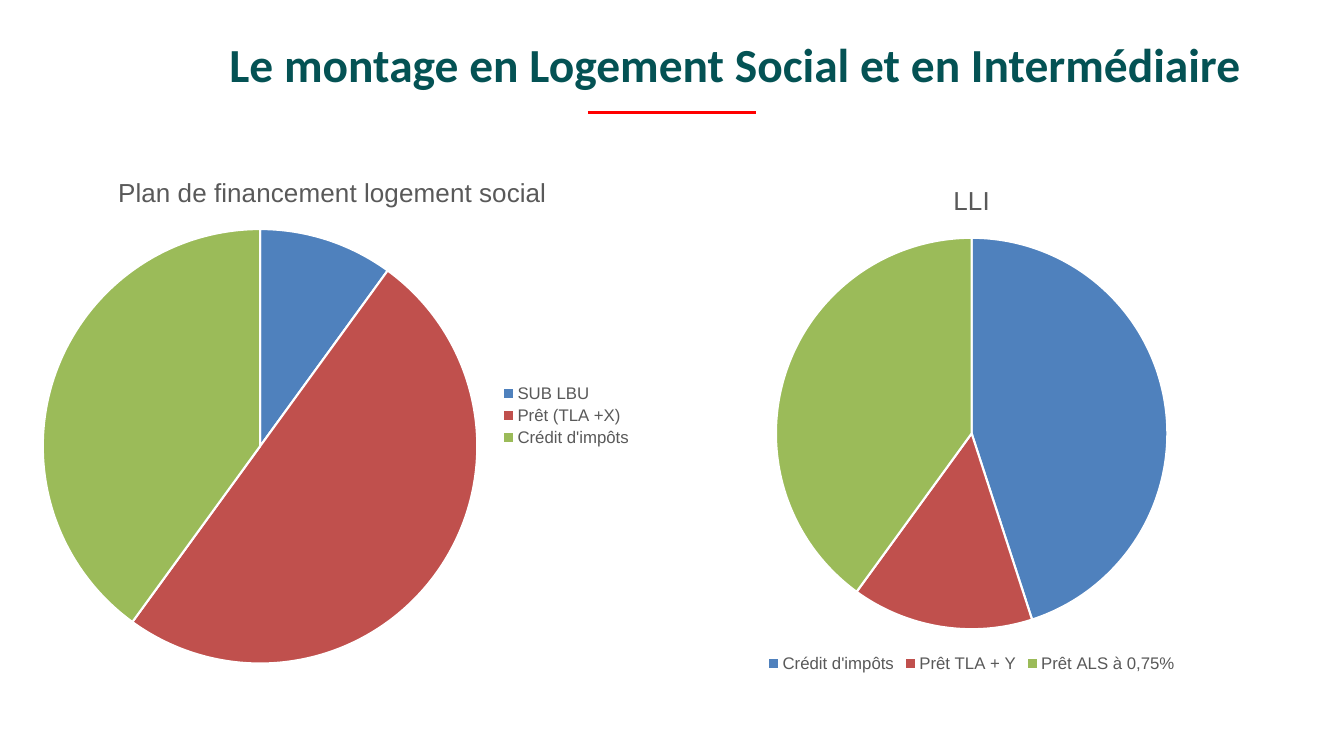
import pptx
import pptx.chart.data
import pptx.dml.color
import pptx.enum.chart
import pptx.enum.shapes
import pptx.enum.text
import pptx.util
from lxml import etree

Pt = pptx.util.Pt
RGBColor = pptx.dml.color.RGBColor
Legend = pptx.enum.chart.XL_LEGEND_POSITION

WHITE = RGBColor(0xFF, 0xFF, 0xFF)
TEAL = RGBColor(0x04, 0x52, 0x54)
RED = RGBColor(0xFF, 0x00, 0x00)
GREY = RGBColor(0x59, 0x59, 0x59)
SLICES = (RGBColor(0x4F, 0x81, 0xBD), RGBColor(0xC0, 0x50, 0x4D), RGBColor(0x9B, 0xBB, 0x59))


class FinancingSlide:
    heading_font = "Calibri"
    chart_font = "Arial"

    def __init__(self, slide):
        self.slide = slide

    def style(self, font, name, size, color, bold=False):
        font.name, font.size, font.bold = name, Pt(size), bold
        font.color.rgb = color

    def heading(self, text, left, top, width, height):
        box = self.slide.shapes.add_textbox(Pt(left), Pt(top), Pt(width), Pt(height))
        frame = box.text_frame
        frame.word_wrap = True
        frame.margin_left = frame.margin_top = frame.margin_right = frame.margin_bottom = 0
        paragraph = frame.paragraphs[0]
        paragraph.alignment = pptx.enum.text.PP_ALIGN.CENTER
        run = paragraph.add_run()
        run.text = text
        self.style(run.font, self.heading_font, 33.9, TEAL, bold=True)

    def rule(self, left, right, y):
        rule = self.slide.shapes.add_connector(
            pptx.enum.shapes.MSO_CONNECTOR.STRAIGHT, Pt(left), Pt(y), Pt(right), Pt(y))
        rule.line.color.rgb = RED
        rule.line.width = Pt(0)
        properties = rule._element.spPr
        etree.SubElement(properties, pptx.oxml.ns.qn("a:effectLst"))

    def pie(self, title, shares, legend_side, left, top, width, height):
        data = pptx.chart.data.CategoryChartData()
        data.categories = list(shares)
        data.add_series(title, list(shares.values()))
        chart = self.slide.shapes.add_chart(
            pptx.enum.chart.XL_CHART_TYPE.PIE, Pt(left), Pt(top), Pt(width), Pt(height), data).chart
        chart.font.name, chart.font.size = self.chart_font, Pt(10)

        # Chart title and legend
        chart.has_title = True
        run = chart.chart_title.text_frame.paragraphs[0].add_run()
        run.text = title
        self.style(run.font, self.chart_font, 18.6, GREY)
        chart.chart_title.include_in_layout = False
        chart.has_legend = True
        chart.legend.position = legend_side
        chart.legend.include_in_layout = False
        self.style(chart.legend.font, self.chart_font, 12, GREY)

        # Slices
        plot = chart.plots[0]
        plot.vary_by_categories = True
        for index, color in enumerate(SLICES):
            slice_format = plot.series[0].points[index].format
            slice_format.fill.solid()
            slice_format.fill.fore_color.rgb = color
            slice_format.line.color.rgb = WHITE
            slice_format.line.width = Pt(1.5)


def main():
    deck = pptx.Presentation()
    deck.slide_width, deck.slide_height = Pt(960), Pt(540)
    page = FinancingSlide(deck.slides.add_slide(deck.slide_layouts[6]))

    # Heading
    page.heading("Le montage en Logement Social et en Intermédiaire", 100, 25.2, 851, 48.2)
    page.rule(420, 540, 80.6)

    # Financing plans
    page.pie("Plan de financement logement social",
             {"SUB LBU": 10, "Prêt (TLA +X)": 50, "Crédit d'impôts": 40},
             Legend.RIGHT, 15.8, 110.2, 443.5, 373.7)
    page.pie("LLI",
             {"Crédit d'impôts": 45, "Prêt TLA + Y": 15, "Prêt ALS à 0,75%": 40},
             Legend.BOTTOM, 472.3, 116.6, 443.5, 366.5)

    deck.save("out.pptx")


if __name__ == "__main__":
    main()
